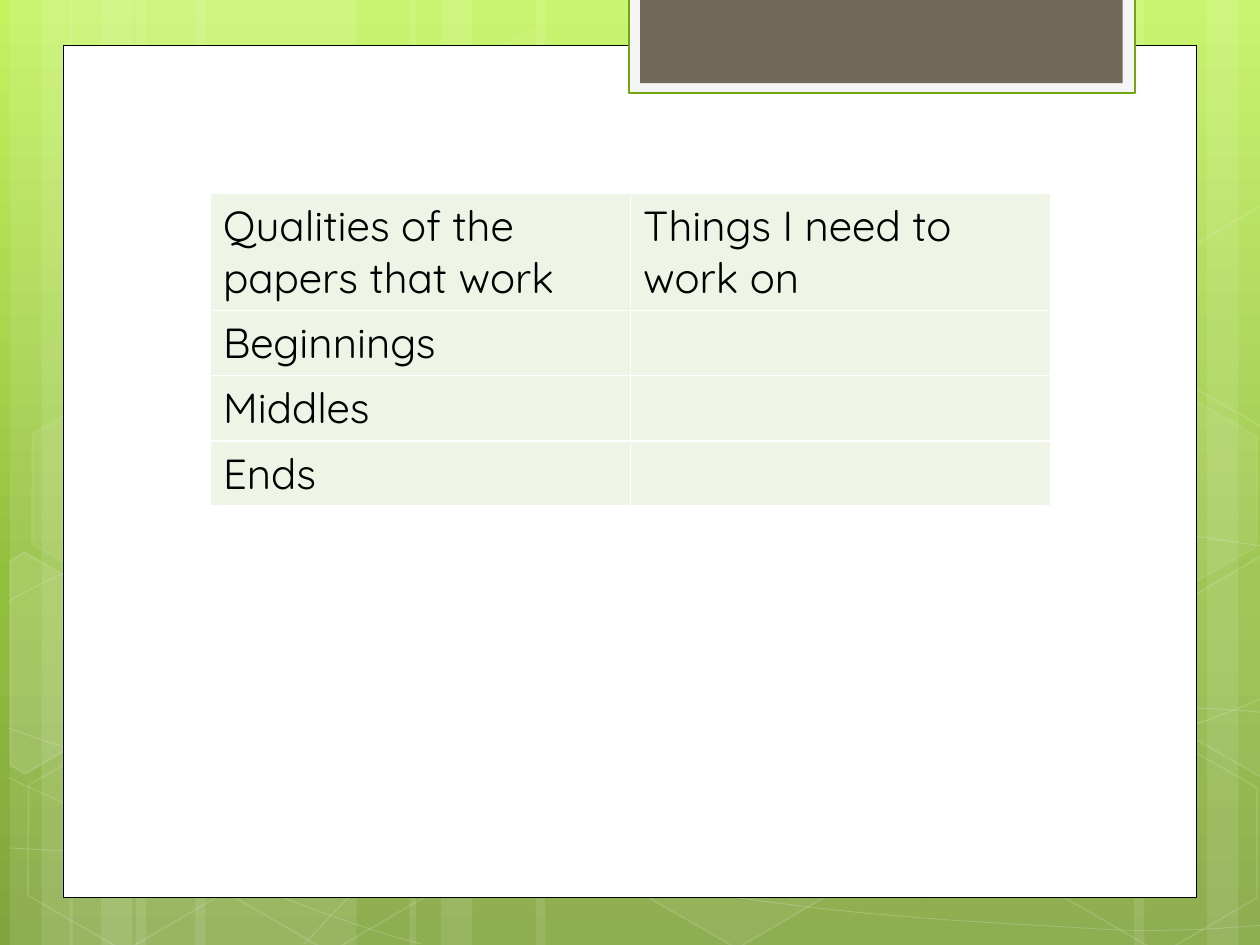
import math
from copy import deepcopy

from lxml import etree
from pptx import Presentation
from pptx.dml.color import RGBColor
from pptx.enum import shapes as kinds
from pptx.oxml import ns
from pptx.util import Inches, Pt

WHITE = RGBColor(0xFF, 0xFF, 0xFF)
BLACK = RGBColor(0, 0, 0)
LIME = RGBColor(0xC3, 0xF3, 0x5F)
LEAF = RGBColor(0x93, 0xBF, 0x3F)
MOSS = RGBColor(0x81, 0xA5, 0x3E)
TAB_PAPER = RGBColor(0xF5, 0xF5, 0xF5)
TAB_EDGE = RGBColor(0x74, 0xA5, 0x10)
TAB_BROWN = RGBColor(0x71, 0x68, 0x5A)
CELL_GREEN = RGBColor(0xEE, 0xF5, 0xE7)
FONT = "Quicksand"
TILT = 30

# left and width of each full-height light band
BANDS = [(1.08, 1.75), (0.08, 0.5), (0.33, 0.83), (1.55, 1.75), (0.55, 0.5), (0.8, 0.83),
         (7.33, 1.75), (9.58, 0.5), (9, 0.83), (4.25, 3.08), (3.25, 0.5), (3.5, 0.83)]

# Bezier chains: a start point, then two control points and an end point per piece
CURVES = [
    [(0.07, 6.73), (0.61, 6.76), (1.15, 6.79), (1.9, 6.78), (2.65, 6.77), (3.58, 6.75),
     (4.58, 6.65), (5.58, 6.55), (7, 6.36), (7.92, 6.17), (8.83, 5.98), (9.77, 5.68),
     (10.07, 5.51)],
    [(0.07, 4.77), (0.36, 4.61), (0.65, 4.46), (1.21, 4.31), (1.78, 4.16), (2.59, 3.94),
     (3.47, 3.87), (4.36, 3.8), (5.44, 3.79), (6.54, 3.87), (7.64, 3.95), (9.47, 4.26),
     (10.07, 4.34)],
    [(0.06, 6.17), (1.27, 6.72), (2.47, 7.27), (3.34, 7.49)],
    [(0.07, 5.78), (0.38, 5.89), (0.7, 6), (1.28, 6.16), (1.86, 6.31), (2.73, 6.56),
     (3.57, 6.73), (4.4, 6.9), (5.45, 7.08), (6.28, 7.18), (7.11, 7.29), (8, 7.33),
     (8.53, 7.36), (9.05, 7.4), (9.19, 7.38), (9.45, 7.38), (9.71, 7.37), (9.89, 7.35),
     (10.07, 7.34)],
    [(2.42, 7.49), (2.6, 7.29), (2.78, 7.09), (3.02, 6.91), (3.26, 6.73), (3.6, 6.53),
     (3.88, 6.39), (4.16, 6.25), (4.33, 6.19), (4.7, 6.09), (5.06, 5.99), (5.73, 5.85),
     (6.08, 5.78), (6.44, 5.71), (6.49, 5.71), (6.8, 5.69), (7.11, 5.66), (7.6, 5.63),
     (7.94, 5.62), (8.29, 5.61), (8.86, 5.62), (8.86, 5.62), (9.08, 5.62), (9.3, 5.62),
     (9.53, 5.62), (9.71, 5.63), (9.88, 5.64), (9.97, 5.65), (10.06, 5.66), (10.03, 5.65),
     (10.06, 5.66)],
]

# left, top, fill opacity and line opacity in percent
HEXAGONS = [(3.34, 0.36, 4, 8), (4.97, 5.89, 6, 12), (0.11, 5.91, None, 12),
            (0.14, 3.12, 7, 8), (1.74, 5.92, None, 12), (8.34, 5.93, None, 12),
            (8.34, 3.14, 7, 8)]

# centre, outline and fill opacity of the hexagons cut off by the slide edge
CUT_HEXAGONS = [
    ((0.36, 5.35), [(0.08, 4.45), (0.19, 4.38), (0.96, 4.82), (0.95, 5.7), (0.2, 6.14),
                    (0.08, 6.07)], 10),
    ((9.85, 5.2), [(9.26, 4.85), (10.01, 4.41), (10.09, 4.46), (10.09, 6.13),
                   (10.02, 6.17), (9.26, 5.73)], 4),
    ((9.85, 2.41), [(9.26, 2.07), (10.01, 1.63), (10.1, 1.68), (10.09, 3.35),
                    (10.02, 3.39), (9.26, 2.95)], None),
]

ROWS = [("Qualities of the papers that work", "Things I need to work on"),
        ("Beginnings", ""), ("Middles", ""), ("Ends", "")]


def set_opacity(fill_element, percent):
    color = fill_element.find(".//" + ns.qn("a:srgbClr"))
    etree.SubElement(color, ns.qn("a:alpha")).set("val", str(percent * 1000))


def style(shape, fill=None, line=None, width=1, fill_opacity=100, line_opacity=100):
    """Give a shape its fill and line; None leaves either one out."""
    shape.shadow.inherit = False
    properties = shape.element.spPr
    if fill is None:
        shape.fill.background()
    else:
        shape.fill.solid()
        shape.fill.fore_color.rgb = fill
        if fill_opacity < 100:
            set_opacity(properties.find(ns.qn("a:solidFill")), fill_opacity)
    if line is None:
        shape.line.fill.background()
    else:
        shape.line.color.rgb = line
        shape.line.width = Pt(width)
        if line_opacity < 100:
            set_opacity(properties.find(ns.qn("a:ln")), line_opacity)


def add_box(slide, left, top, width, height, kind=kinds.MSO_SHAPE.RECTANGLE):
    return slide.shapes.add_shape(kind, Inches(left), Inches(top), Inches(width), Inches(height))


def add_outline(slide, points, close):
    corners = [(Inches(x), Inches(y)) for x, y in points]
    builder = slide.shapes.build_freeform(*corners[0])
    builder.add_line_segments(corners[1:], close=close)
    return builder.convert_to_shape()


def add_curve(slide, chain):
    """Draw the chain's points, then join each three segments into one Bezier piece."""
    curve = add_outline(slide, chain, False)
    segments = list(curve.element.iter(ns.qn("a:lnTo")))
    for i in range(0, len(segments), 3):
        piece = etree.Element(ns.qn("a:cubicBezTo"))
        segments[i].addprevious(piece)
        for segment in segments[i:i + 3]:
            piece.append(segment[0])
            segment.getparent().remove(segment)
    return curve


def turn_back(point, centre):
    """Undo the tilt of a point about a centre."""
    cos, sin = math.cos(math.radians(TILT)), math.sin(math.radians(TILT))
    x, y = point[0] - centre[0], point[1] - centre[1]
    return centre[0] + x * cos + y * sin, centre[1] - x * sin + y * cos


def fill_background(slide):
    fill = slide.background.fill
    fill.gradient()
    fill.gradient_angle = 270
    stop_list = slide.element.find(".//" + ns.qn("a:gsLst"))
    stop_list.insert(1, deepcopy(stop_list[0]))
    for stop, color, position in zip(fill.gradient_stops, (LIME, LEAF, MOSS), (0, 0.62, 1)):
        stop.color.rgb = color
        stop.position = position


def add_backdrop(slide, height):
    """Light bands, curves and hexagons over the green background."""
    for left, width in BANDS:
        style(add_box(slide, left, 0, width, height), WHITE, fill_opacity=10)
    for chain in CURVES:
        style(add_curve(slide, chain), line=WHITE, width=0.5, line_opacity=20)
    for left, top, opacity, line_opacity in HEXAGONS:
        hexagon = add_box(slide, left, top, 1.75, 1.52, kinds.MSO_SHAPE.HEXAGON)
        hexagon.adjustments[0] = 0.285
        hexagon.rotation = TILT
        style(hexagon, WHITE if opacity else None, WHITE, 1, opacity or 100, line_opacity)
    for centre, corners, opacity in CUT_HEXAGONS:
        hexagon = add_outline(slide, [turn_back(corner, centre) for corner in corners], True)
        hexagon.rotation = TILT
        style(hexagon, WHITE if opacity else None, WHITE, 1, opacity or 100, 12)


def add_panel(slide, left, top, width, height):
    style(add_box(slide, left, top, width, height), WHITE, BLACK, 0.5)


def add_tab(slide, left, top, width, height):
    style(add_box(slide, left, top, width, height), TAB_PAPER, TAB_EDGE, 1.25)
    style(add_box(slide, left + 0.09, top, width - 0.19, height - 0.08), TAB_BROWN)


def add_borders(cell):
    properties = cell._tc.get_or_add_tcPr()
    for side in ("lnL", "lnR", "lnT", "lnB"):
        border = etree.SubElement(properties, ns.qn("a:" + side), w=str(Pt(1)))
        fill = etree.SubElement(border, ns.qn("a:solidFill"))
        etree.SubElement(fill, ns.qn("a:srgbClr"), val=str(WHITE))


def add_checklist(slide, left, top, width, row_height):
    checklist = slide.shapes.add_table(len(ROWS), len(ROWS[0]), Inches(left), Inches(top),
                                       Inches(width), Inches(row_height * len(ROWS))).table
    for r, row in enumerate(ROWS):
        for c, wording in enumerate(row):
            cell = checklist.cell(r, c)
            add_borders(cell)
            cell.fill.solid()
            cell.fill.fore_color.rgb = CELL_GREEN
            cell.text_frame.text = wording
            for run in cell.text_frame.paragraphs[0].runs:
                run.font.name, run.font.size, run.font.bold = FONT, Pt(24), False
                run.font.color.rgb = BLACK


def main():
    deck = Presentation()
    deck.slide_width, deck.slide_height = Inches(10), Inches(7.5)
    slide = deck.slides.add_slide(deck.slide_layouts[6])
    fill_background(slide)
    add_backdrop(slide, 7.5)
    add_panel(slide, 0.5, 0.36, 9, 6.76)
    add_tab(slide, 4.99, -0.02, 4.02, 0.76)
    add_checklist(slide, 1.67, 1.53, 6.67, 0.41)
    deck.save("out.pptx")


if __name__ == "__main__":
    main()
